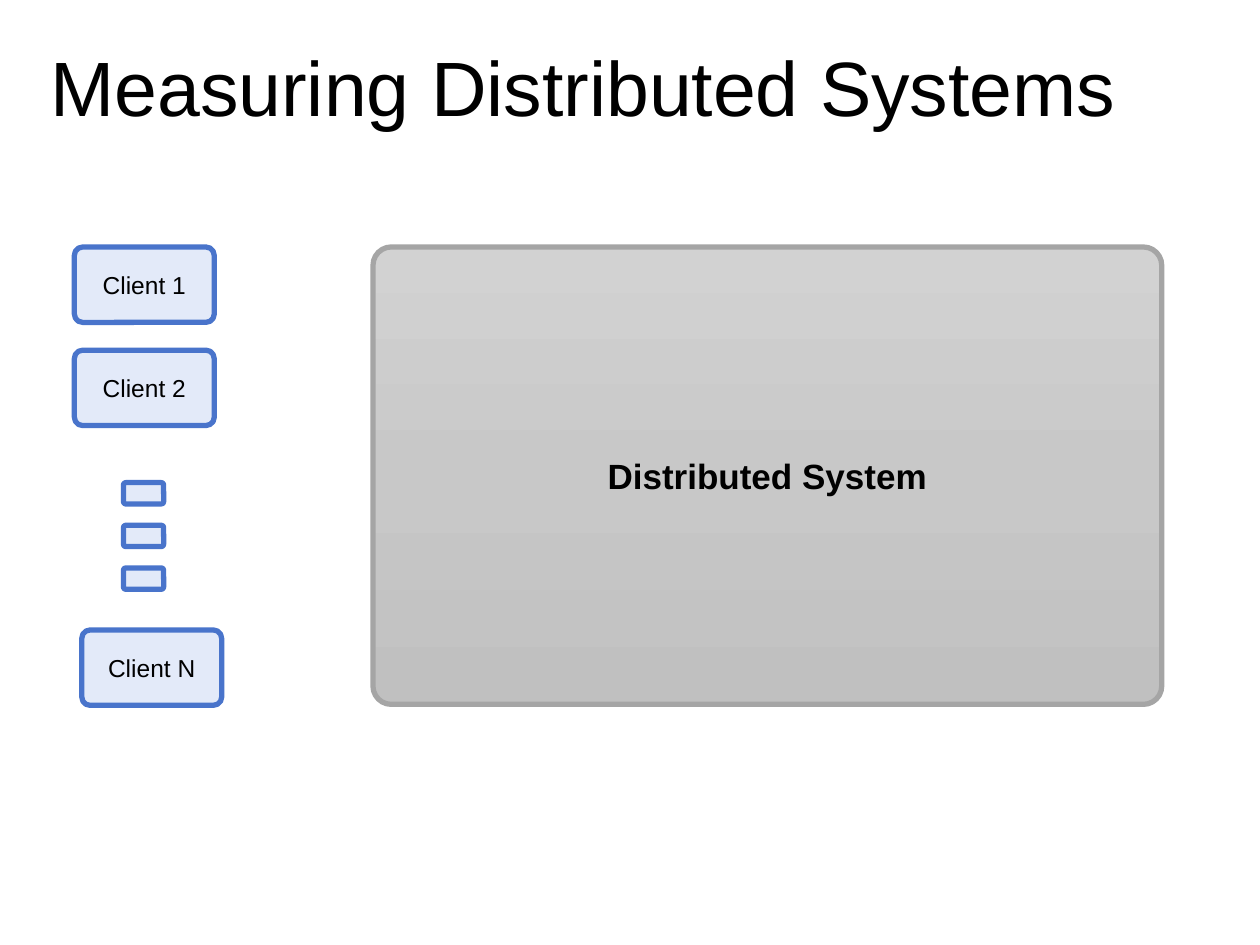
from copy import deepcopy

from pptx import Presentation
from pptx.dml.color import RGBColor
from pptx.enum import shapes, text
from pptx.util import Cm, Pt

COLOURS = {
    "ink": "000000",
    "client": "E3EAF9",
    "client_line": "4974CB",
    "system_top": "D2D2D2",
    "system_middle": "C8C8C8",
    "system_bottom": "C0C0C0",
    "system_line": "A5A5A5",
}
TITLE_ONLY = 5


def colour(name):
    return RGBColor.from_string(COLOURS[name])


class SlideBuilder:
    """Holds the shared style and the slide being filled."""

    font = "Arial"
    line_width = Pt(3)

    def __init__(self, page):
        self.page = page

    def label(self, shape, words, size, align, bold=False, spacing=None):
        frame = shape.text_frame
        frame.word_wrap = True
        frame.auto_size = text.MSO_AUTO_SIZE.NONE
        frame.vertical_anchor = text.MSO_ANCHOR.MIDDLE
        para = frame.paragraphs[0]
        para.alignment = align
        para.line_spacing = spacing
        span = para.add_run()
        span.text = words
        for name, value in {"name": self.font, "size": Pt(size), "bold": bold}.items():
            setattr(span.font, name, value)
        span.font.color.rgb = colour("ink")

    def title(self, words, left, top, width, height):
        box = self.page.shapes.title
        places = {"left": left, "top": top, "width": width, "height": height}
        for name, value in places.items():
            setattr(box, name, Cm(value))
        self.label(box, words, 44, text.PP_ALIGN.LEFT, spacing=0.9)

    def rounded_box(self, left, top, width, height, line, rounding):
        box = self.page.shapes.add_shape(
            shapes.MSO_SHAPE.ROUNDED_RECTANGLE,
            Cm(left), Cm(top), Cm(width), Cm(height),
        )
        box.adjustments[0] = rounding
        box.shadow.inherit = False
        box.line.color.rgb = colour(line)
        box.line.width = self.line_width
        return box

    def client(self, left, top, width, height, words=None):
        box = self.rounded_box(left, top, width, height, "client_line", 0.11)
        box.fill.solid()
        box.fill.fore_color.rgb = colour("client")
        if words:
            self.label(box, words, 14, text.PP_ALIGN.CENTER)

    def system(self, left, top, width, height, words):
        box = self.rounded_box(left, top, width, height, "system_line", 0.04)
        self.shade(box, ["system_top", "system_middle", "system_bottom"])
        self.label(box, words, 20, text.PP_ALIGN.CENTER, bold=True)

    def shade(self, box, names):
        """Fill the box from top to bottom with evenly spaced colours."""
        box.fill.gradient()
        box.fill.gradient_angle = 270
        stop_list = box.element.spPr.xpath("./a:gradFill/a:gsLst")[0]
        while len(stop_list) < len(names):
            stop_list.append(deepcopy(stop_list[-1]))
        for index, (stop, name) in enumerate(zip(box.fill.gradient_stops, names)):
            stop.position = index / (len(names) - 1)
            stop.color.rgb = colour(name)


def main():
    deck = Presentation()
    deck.slide_width, deck.slide_height = Cm(25.4), Cm(19.05)
    builder = SlideBuilder(deck.slides.add_slide(deck.slide_layouts[TITLE_ONLY]))

    builder.title("Measuring Distributed Systems", 0.76, 0, 23.88, 3.68)

    client_size = (2.82, 1.52)
    top = 4.98
    for row, words in enumerate(["Client 1", "Client 2"]):
        builder.client(1.5, top + row * 2.08, *client_size, words)
    builder.client(1.65, 12.7, *client_size, "Client N")
    for row in range(3):
        builder.client(2.49, 9.73 + row * 0.86, 0.81, 0.43)

    builder.system(7.52, top, 15.9, 9.22, "Distributed System")
    deck.save("out.pptx")


if __name__ == "__main__":
    main()
